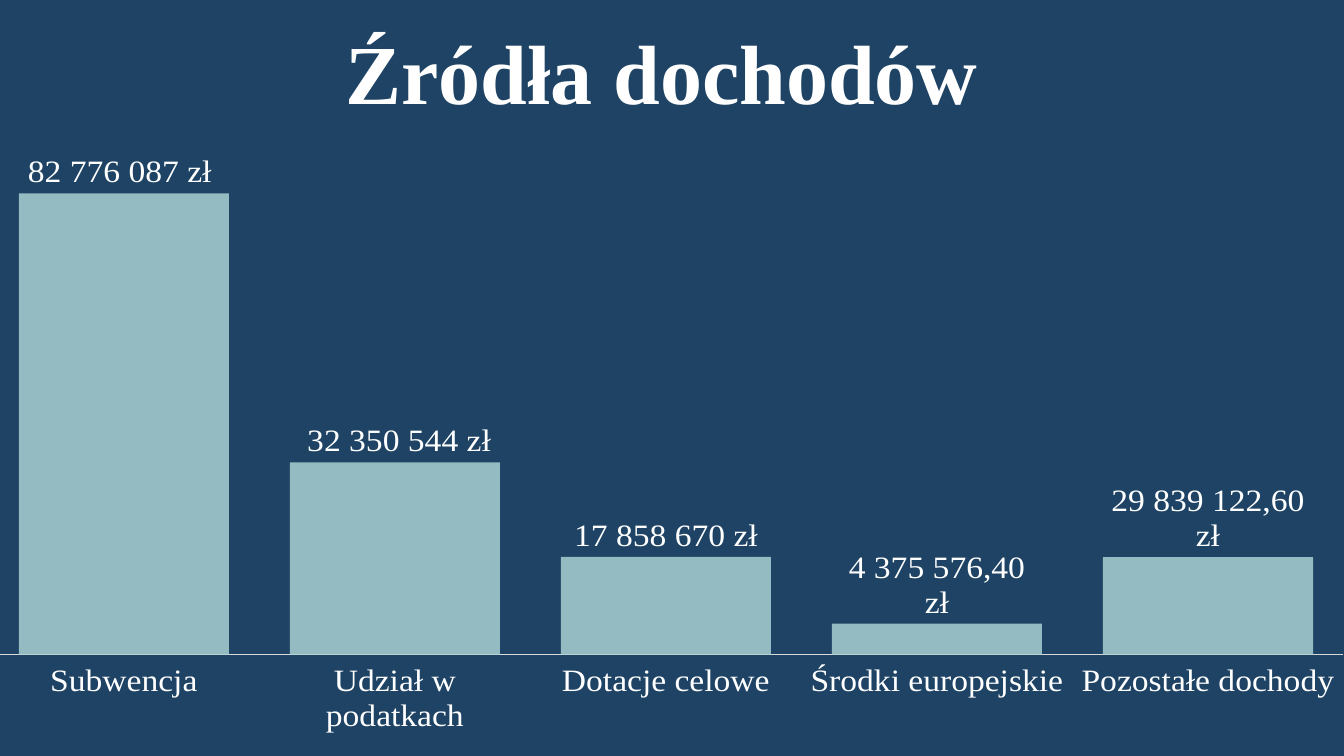
from lxml.etree import SubElement
from pptx import Presentation
from pptx.chart.data import CategoryChartData
from pptx.dml.color import RGBColor
from pptx.enum.chart import XL_CHART_TYPE, XL_LABEL_POSITION, XL_TICK_LABEL_POSITION, XL_TICK_MARK
from pptx.enum.text import PP_ALIGN
from pptx.oxml import parse_xml
from pptx.oxml.ns import nsdecls, qn
from pptx.util import Inches, Pt

INCOME = [
    ("Subwencja", 81850000, "82 776 087 zł "),
    ("Udział w podatkach", 34100000, " 32 350 544 zł"),
    ("Dotacje celowe", 17340000, "17 858 670 zł"),
    ("Środki europejskie", 5490000, "4 375 576,40 zł"),
    ("Pozostałe dochody ", 17290000, "29 839 122,60 zł"),
]


def rgb(value):
    return RGBColor.from_string(value)


class Deck:
    font_name = "Times New Roman"
    text_color = "FFFFFF"
    background = "1E4364"
    bar_color = "A5CDCF"
    axis_color = "D9D9D9"

    def __init__(self):
        self.prs = Presentation()
        self.prs.slide_width, self.prs.slide_height = Inches(13.33), Inches(7.5)
        self.s = self.prs.slides.add_slide(self.prs.slide_layouts[6])
        fill = self.s.background.fill
        fill.solid()
        fill.fore_color.rgb = rgb(self.background)

    def style(self, font, size, bold=False):
        font.name, font.size, font.bold = self.font_name, Pt(size), bold
        font.color.rgb = rgb(self.text_color)

    def title(self, text, left, top, width, height):
        sp = self.s.shapes.add_textbox(Inches(left), Inches(top), Inches(width), Inches(height))
        tf = sp.text_frame
        tf.word_wrap = True
        p = tf.paragraphs[0]
        p.text = text
        p.alignment = PP_ALIGN.CENTER
        p.line_spacing = 0.9
        self.style(p.font, 60, bold=True)

    def column_chart(self, rows, left, top, width, height):
        data = CategoryChartData(number_format="#,##0.00")
        data.categories = [name for name, _, _ in rows]
        data.add_series("Series 1", [value for _, value, _ in rows])
        chart = self.s.shapes.add_chart(
            XL_CHART_TYPE.COLUMN_CLUSTERED, Inches(left), Inches(top),
            Inches(width), Inches(height), data).chart
        chart.has_legend = chart.has_title = False
        self.style(chart.font, 24)
        self.axes(chart)
        self.plot_area(chart, x=0, y=0.026, w=1, h=0.912)
        plot = chart.plots[0]
        plot.gap_width, plot.overlap = 29, -100
        plot.vary_by_categories = False
        self.bars(plot.series[0], [label for _, _, label in rows])

    def axes(self, chart):
        axis = chart.category_axis
        axis.major_tick_mark = XL_TICK_MARK.NONE
        axis.tick_label_position = XL_TICK_LABEL_POSITION.LOW
        axis.format.line.color.rgb = rgb(self.axis_color)
        axis.format.line.width = Pt(0.75)
        self.style(axis.tick_labels.font, 24)
        values = chart.value_axis
        values.visible = values.has_major_gridlines = False
        values.minimum_scale, values.maximum_scale = 0, 90000000

    def plot_area(self, chart, **box):
        """Fix the inner plot area as fractions of the chart."""
        area = chart.plots[0]._element.getparent()
        for old in area.findall(qn("c:layout")):
            area.remove(old)
        layout = parse_xml(f"<c:layout {nsdecls('c')}><c:manualLayout/></c:layout>")
        settings = {"layoutTarget": "inner", "xMode": "edge", "yMode": "edge", **box}
        for tag, value in settings.items():
            SubElement(layout[0], qn(f"c:{tag}")).set("val", str(value))
        area.insert(0, layout)

    def bars(self, series, texts):
        fill = series.format.fill
        fill.solid()
        fill.fore_color.rgb = rgb(self.bar_color)
        color = series._element.find(".//" + qn("a:srgbClr"))
        SubElement(color, qn("a:alpha")).set("val", "87000")
        labels = series.data_labels
        labels.show_value = True
        labels.position = XL_LABEL_POSITION.OUTSIDE_END
        labels.number_format, labels.number_format_is_linked = "#,##0.00", False
        self.style(labels.font, 24)
        for i, text in enumerate(texts):
            label = series.points[i].data_label
            r = label.text_frame.paragraphs[0].add_run()
            r.text = text
            self.style(r.font, 24)
            label.position = XL_LABEL_POSITION.OUTSIDE_END


def main():
    deck = Deck()
    deck.title("Źródła dochodów ", 0.52, 0.27, 12.29, 1.06)
    deck.column_chart(INCOME, -0.12, 1.32, 13.45, 5.96)
    deck.prs.save("out.pptx")


if __name__ == "__main__":
    main()
